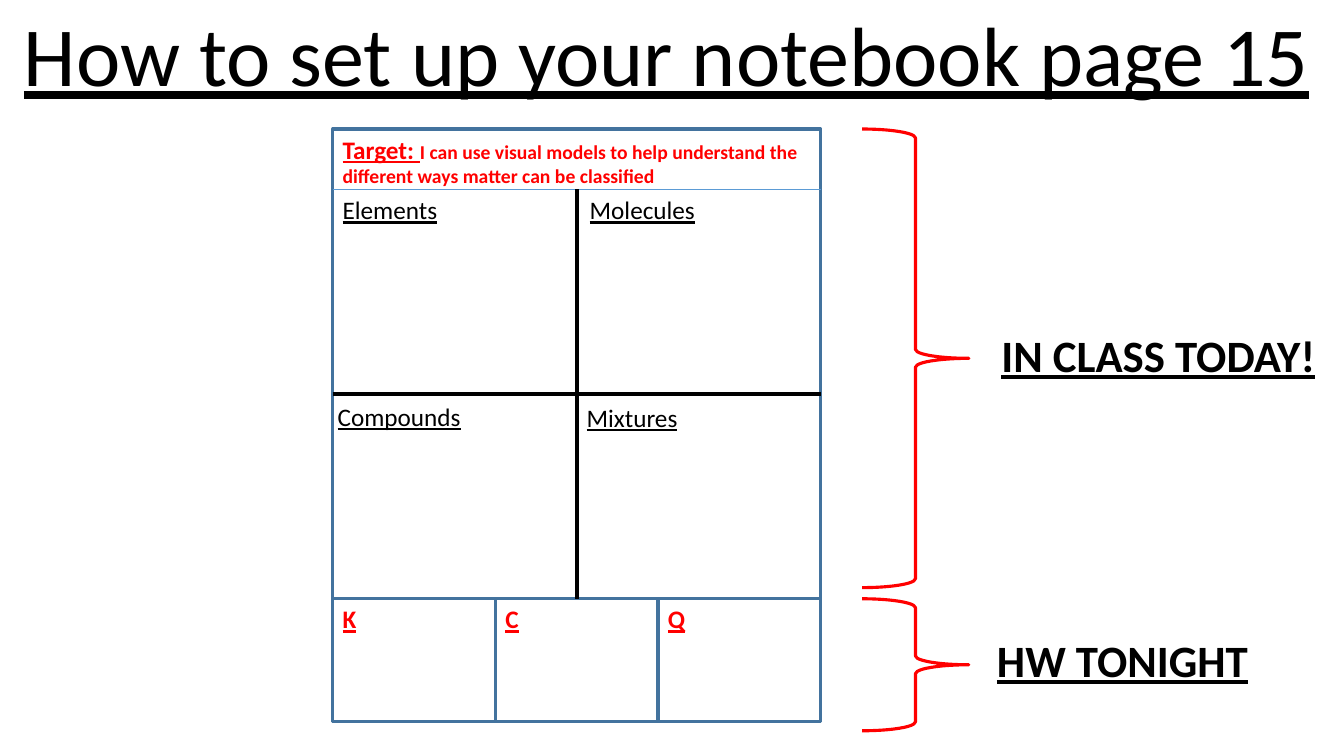
import pptx
import pptx.util
import pptx.dml.color
import pptx.enum.shapes
import pptx.enum.text
import pptx.oxml.ns
from lxml import etree

Inches = pptx.util.Inches
Pt = pptx.util.Pt
SHAPE = pptx.enum.shapes.MSO_SHAPE
ALIGN = pptx.enum.text.PP_ALIGN
ANCHOR = pptx.enum.text.MSO_ANCHOR

BLUE, RED, BLACK, WHITE = "43739E", "FF0000", "000000", "FFFFFF"


def color(value):
    return pptx.dml.color.RGBColor.from_string(value)


def style_font(font, size, value, bold=False, underline=True):
    font.name = "Calibri"
    font.size = Pt(size)
    font.bold = bold
    font.underline = underline
    font.color.rgb = color(value)


def add_outline(s, kind, box, line, fill=None):
    sp = s.shapes.add_shape(kind, *map(Inches, box))
    sp.shadow.inherit = False
    if fill:
        sp.fill.solid()
        sp.fill.fore_color.rgb = color(fill)
    else:
        sp.fill.background()
    sp.line.color.rgb = color(line)
    sp.line.width = Pt(2.25)
    return sp


def add_panel(s, box, runs):
    tf = add_outline(s, SHAPE.RECTANGLE, box, BLUE, WHITE).text_frame
    tf.word_wrap = True
    tf.vertical_anchor = ANCHOR.TOP
    p = tf.paragraphs[0]
    p.alignment = ALIGN.LEFT
    for text, size, underline in runs:
        r = p.add_run()
        r.text = text
        style_font(r.font, size, RED, True, underline)


def add_rule(s, x1, y1, x2, y2, value, width):
    line = s.shapes.add_connector(
        pptx.enum.shapes.MSO_CONNECTOR.STRAIGHT, *map(Inches, (x1, y1, x2, y2)))
    line.line.color.rgb = color(value)
    line.line.width = Pt(width)
    etree.SubElement(line._element.spPr, pptx.oxml.ns.qn("a:effectLst"))


def add_label(s, box, text, size, bold=False, align=ALIGN.LEFT):
    tf = s.shapes.add_textbox(*map(Inches, box)).text_frame
    tf.word_wrap = True
    tf.auto_size = pptx.enum.text.MSO_AUTO_SIZE.SHAPE_TO_FIT_TEXT
    p = tf.paragraphs[0]
    p.text = text
    p.alignment = align
    style_font(p.font, size, BLACK, bold)


def add_title(s, box, text):
    sp = s.shapes.title
    sp.left, sp.top, sp.width, sp.height = map(Inches, box)
    tf = sp.text_frame
    tf.word_wrap = True
    tf.auto_size = pptx.enum.text.MSO_AUTO_SIZE.NONE
    tf.vertical_anchor = ANCHOR.BOTTOM
    p = tf.paragraphs[0]
    p.text = text
    p.alignment = ALIGN.CENTER
    p.line_spacing = 0.9
    style_font(p.font, 60, BLACK)


def add_page(s, left, top, width, height, target_height, footer_height):
    right, middle = left + width, left + width / 2
    grid_top = top + target_height
    footer_top = top + height - footer_height
    grid_middle = (grid_top + footer_top) / 2
    add_panel(s, (left, top, width, height), [
        ("Target: ", 18, True),
        ("I can use visual models to help understand the different ways "
         "matter can be classified", 14, False)])
    column = width / 3
    for i, letter in enumerate("KCQ"):
        box = (left + i * column, footer_top, column, footer_height)
        add_panel(s, box, [(letter, 18, True)])
    add_rule(s, left, grid_top, right, grid_top, "5B9BD5", 0.5)
    add_rule(s, left, grid_middle, right, grid_middle, BLACK, 3)
    add_rule(s, middle, grid_top, middle, footer_top, BLACK, 3)
    for text, x, y in (("Elements", left, grid_top),
                       ("Molecules", middle + 0.03, grid_top),
                       ("Compounds", left - 0.05, grid_middle + 0.02),
                       ("Mixtures", middle, grid_middle + 0.03)):
        add_label(s, (x, y, 1.72, 0.4), text, 18)


def add_timing(s, brace_box, label_left, label_top, text, align):
    add_outline(s, SHAPE.RIGHT_BRACE, brace_box, RED)
    add_label(s, (label_left, label_top, 3.46, 0.64), text, 32, True, align)


def main():
    prs = pptx.Presentation()
    prs.slide_width, prs.slide_height = Inches(13.33), Inches(7.5)
    s = prs.slides.add_slide(prs.slide_layouts[5])
    add_title(s, (0, 0, 13.22, 1.09), "How to set up your notebook page 15")
    add_page(s, 3.3, 1.28, 4.84, 5.88, 0.6, 1.22)
    add_timing(s, (8.55, 1.28, 1.06, 4.55), 9.76, 3.2,
               "IN CLASS TODAY!", ALIGN.CENTER)
    add_timing(s, (8.55, 5.94, 1.06, 1.31), 9.79, 6.23,
               "HW TONIGHT", ALIGN.LEFT)
    prs.save("out.pptx")


if __name__ == "__main__":
    main()
